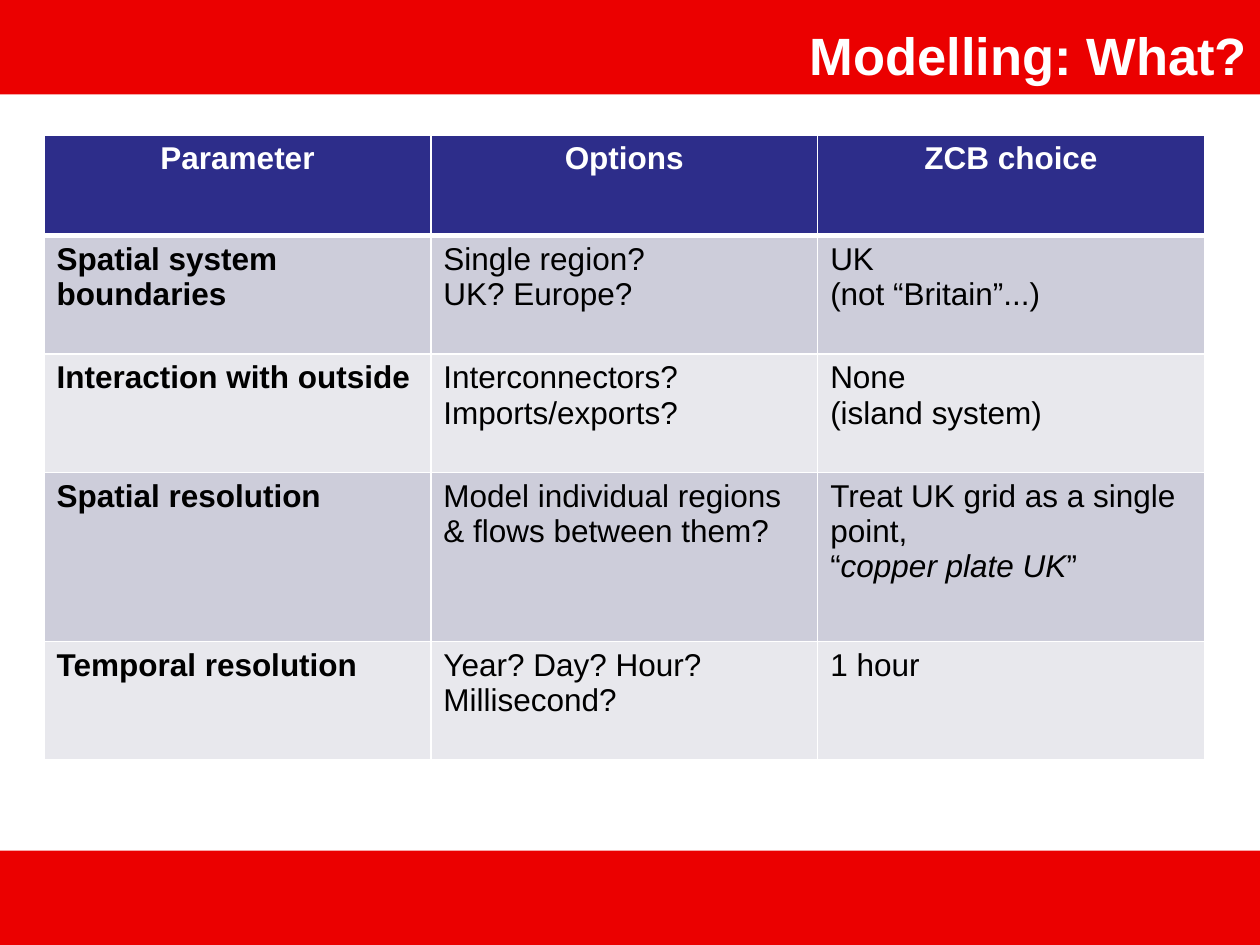
from lxml import etree
from pptx import Presentation
from pptx.dml.color import RGBColor
from pptx.enum.shapes import MSO_SHAPE
from pptx.enum.text import MSO_ANCHOR, MSO_AUTO_SIZE, PP_ALIGN
from pptx.oxml.ns import qn
from pptx.util import Inches, Pt

RECTANGLE = MSO_SHAPE.RECTANGLE
TOP = MSO_ANCHOR.TOP
GROW = MSO_AUTO_SIZE.SHAPE_TO_FIT_TEXT
LEFT, CENTER, RIGHT = PP_ALIGN.LEFT, PP_ALIGN.CENTER, PP_ALIGN.RIGHT

RED = RGBColor(0xEB, 0x00, 0x00)
NAVY = RGBColor(0x2D, 0x2D, 0x8A)
DARK_BAND = RGBColor(0xCD, 0xCD, 0xDA)
LIGHT_BAND = RGBColor(0xE8, 0xE8, 0xED)
WHITE = RGBColor(0xFF, 0xFF, 0xFF)
BLACK = RGBColor(0x00, 0x00, 0x00)
FONT = "Arial"

TITLE = "Modelling: What?"
BANDS = [(-0.17, 6.75), (-0.08, 0)]
ITALIC_MARK = "*"
ROWS = [
    ("Parameter", "Options", "ZCB choice"),
    ("Spatial system boundaries", "Single region? \nUK? Europe?", "UK\n(not “Britain”...)"),
    ("Interaction with outside", "Interconnectors?\nImports/exports?", "None\n(island system)"),
    ("Spatial resolution", "Model individual regions & flows between them?",
     "Treat UK grid as a single point, \n“*copper plate UK*”"),
    ("Temporal resolution", "Year? Day? Hour? Millisecond?", "1 hour"),
]
ROW_HEIGHTS = [0.8, 0.94, 0.94, 1.34, 0.94]
COLUMN_WIDTH = 3.07


def style(span, size, color, bold, italic=False):
    span.font.name = FONT
    span.font.size = Pt(size)
    span.font.color.rgb = color
    span.font.bold = bold
    span.font.italic = italic


def add_borders(cell, widths):
    properties = cell._tc.get_or_add_tcPr()
    for side, width in widths.items():
        line = etree.SubElement(properties, qn(f"a:ln{side}"), w=str(Pt(width)))
        fill = etree.SubElement(line, qn("a:solidFill"))
        etree.SubElement(fill, qn("a:srgbClr"), val=str(WHITE))


def fill_cell(cell, text, row, column):
    header = row == 0
    add_borders(cell, {"L": 1, "R": 1, "T": 3 if row == 1 else 1, "B": 3 if header else 1})
    cell.fill.solid()
    cell.fill.fore_color.rgb = NAVY if header else DARK_BAND if row % 2 else LIGHT_BAND
    para = cell.text_frame.paragraphs[0]
    para.alignment = CENTER if header else LEFT
    plain, *others = text.split(ITALIC_MARK)
    para.text = plain
    color, bold = WHITE if header else BLACK, header or column == 0
    for span in para.runs:
        style(span, 18, color, bold)
    for index, part in enumerate(others):
        span = para.add_run()
        span.text = part
        style(span, 18, color, bold, italic=index % 2 == 0)


deck = Presentation()
deck.slide_width, deck.slide_height = Inches(10), Inches(7.5)
page = deck.slides.add_slide(deck.slide_layouts[5])

for left, top in BANDS:
    band = page.shapes.add_shape(RECTANGLE, Inches(left), Inches(top), Inches(10.25), Inches(0.75))
    band.shadow.inherit = False
    band.fill.solid()
    band.fill.fore_color.rgb = RED
    band.line.fill.background()

title = page.shapes.title
page.shapes._spTree.append(title._element)
title.left, title.top, title.width, title.height = Inches(0), Inches(0.13), Inches(10), Inches(0.61)
frame = title.text_frame
frame.text = TITLE
frame.word_wrap = True
frame.auto_size = GROW
frame.vertical_anchor = TOP
frame.paragraphs[0].alignment = RIGHT
style(frame.paragraphs[0].runs[0], 30, WHITE, True)

table = page.shapes.add_table(
    len(ROWS), len(ROWS[0]), Inches(0.35), Inches(1.07),
    Inches(COLUMN_WIDTH * len(ROWS[0])), Inches(sum(ROW_HEIGHTS))).table
for column in table.columns:
    column.width = Inches(COLUMN_WIDTH)
for row, (texts, height) in enumerate(zip(ROWS, ROW_HEIGHTS)):
    table.rows[row].height = Inches(height)
    for column, text in enumerate(texts):
        fill_cell(table.cell(row, column), text, row, column)

deck.save("out.pptx")
